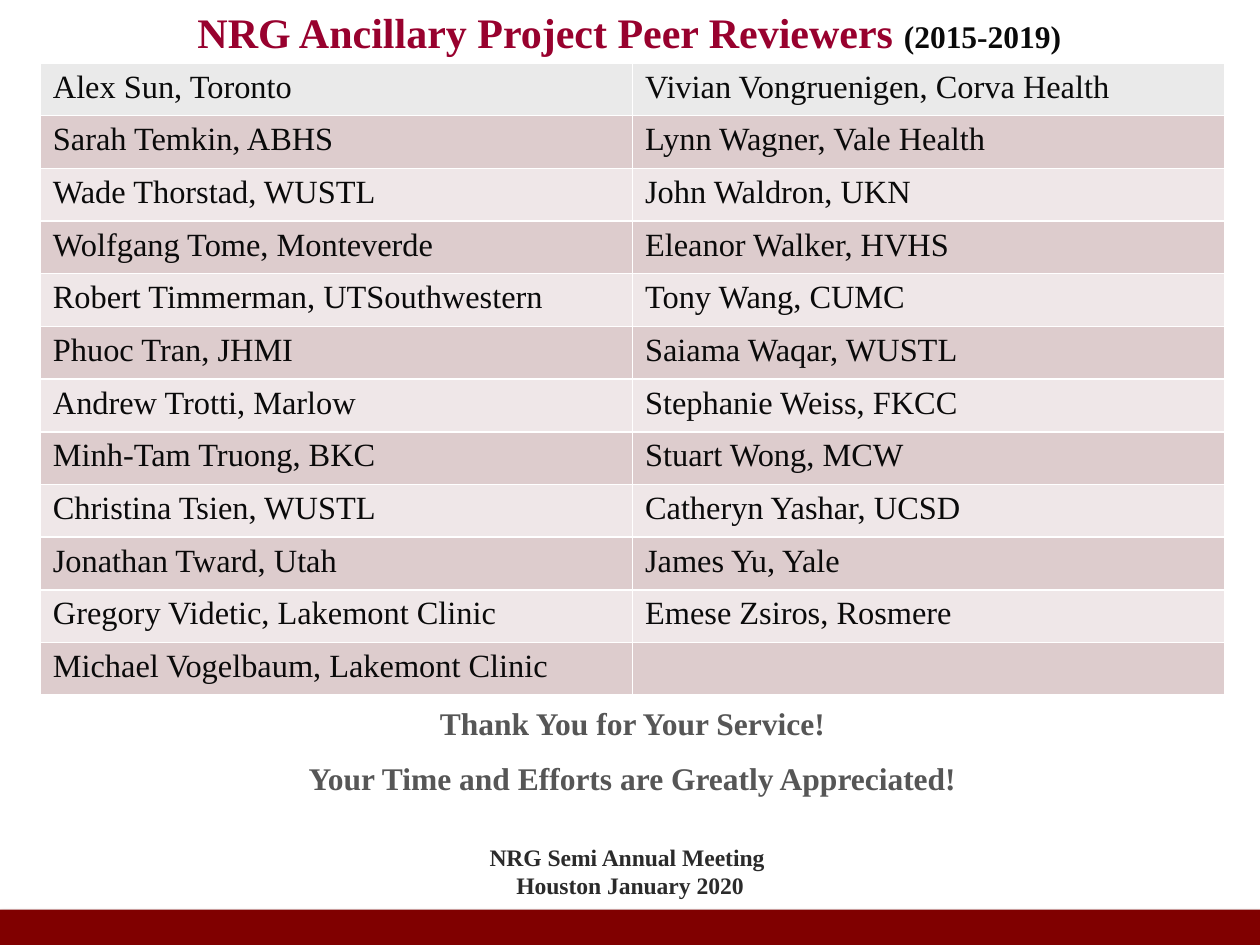
from lxml import etree
from pptx import Presentation
from pptx import util as u
from pptx.dml import color
from pptx.enum import shapes, text
from pptx.oxml import ns

FACE = "Times New Roman"
INK = "0A0A0A"
NAMES = [
    ("Alex Sun, Toronto", "Vivian Vongruenigen, Corva Health"),
    ("Sarah Temkin, ABHS", "Lynn Wagner, Vale Health"),
    ("Wade Thorstad, WUSTL", "John Waldron, UKN"),
    ("Wolfgang Tome, Monteverde", "Eleanor Walker, HVHS"),
    ("Robert Timmerman, UTSouthwestern", "Tony Wang, CUMC"),
    ("Phuoc Tran, JHMI", "Saiama Waqar, WUSTL"),
    ("Andrew Trotti, Marlow", "Stephanie Weiss, FKCC"),
    ("Minh-Tam Truong, BKC", "Stuart Wong, MCW"),
    ("Christina Tsien, WUSTL", "Catheryn Yashar, UCSD"),
    ("Jonathan Tward, Utah", "James Yu, Yale"),
    ("Gregory Videtic, Lakemont Clinic", "Emese Zsiros, Rosmere"),
    ("Michael Vogelbaum, Lakemont Clinic", ""),
]


def tint(value):
    return color.RGBColor.from_string(value)


def place(shape, box):
    shape.left, shape.top, shape.width, shape.height = map(u.Inches, box)


def add_run(para, words, size, shade, bold=True):
    run = para.add_run()
    run.text = words
    font = run.font
    font.name, font.size, font.bold = FACE, u.Pt(size), bold
    font.color.rgb = tint(shade)


def set_frame(frame):
    frame.word_wrap = True
    frame.auto_size = text.MSO_AUTO_SIZE.NONE
    frame.vertical_anchor = text.MSO_ANCHOR.TOP


def add_band(slide, box):
    band = slide.shapes.add_shape(shapes.MSO_SHAPE.RECTANGLE, *map(u.Inches, box))
    band.fill.solid()
    band.fill.fore_color.rgb = tint("800000")
    band.line.fill.background()
    band.shadow.inherit = False
    effects = band.element.spPr.find(ns.qn("a:effectLst"))
    shade = etree.SubElement(effects, ns.qn("a:outerShdw"), blurRad=str(u.Pt(3.1)),
                             dist=str(u.Pt(1.8)), dir="5400000", rotWithShape="0")
    black = etree.SubElement(shade, ns.qn("a:srgbClr"), val="000000")
    etree.SubElement(black, ns.qn("a:alpha"), val="35000")


def add_title(slide, box):
    title = slide.shapes.title
    place(title, box)
    set_frame(title.text_frame)
    para = title.text_frame.paragraphs[0]
    para.alignment = text.PP_ALIGN.CENTER
    add_run(para, "NRG Ancillary Project Peer Reviewers ", 24, "98012E")
    add_run(para, "(2015-2019)", 18, INK)


def add_names(slide, box):
    table = slide.shapes.add_table(len(NAMES), 2, *map(u.Inches, box)).table
    for i, pair in enumerate(NAMES):
        fill = "EAEAEA" if i == 0 else "DDCCCD" if i % 2 else "EFE7E8"
        for j, name in enumerate(pair):
            cell = table.cell(i, j)
            cell.fill.solid()
            cell.fill.fore_color.rgb = tint(fill)
            if name:
                add_run(cell.text_frame.paragraphs[0], name, 18.5, INK, False)


def add_lines(slide, box, lines, size, shade, space=None, after=0):
    frame = slide.shapes.add_textbox(*map(u.Inches, box)).text_frame
    set_frame(frame)
    for i, line in enumerate(lines):
        para = frame.add_paragraph() if i else frame.paragraphs[0]
        para.alignment = text.PP_ALIGN.CENTER
        para.line_spacing = space
        para.space_after = u.Pt(after)
        add_run(para, line, size, shade)


def main():
    deck = Presentation()
    deck.slide_width, deck.slide_height = u.Inches(10), u.Inches(7.5)
    slide = deck.slides.add_slide(deck.slide_layouts[5])
    add_band(slide, (0, 7.22, 10, 0.28))
    add_title(slide, (0.97, 0, 8.05, 0.5))
    add_lines(slide, (3.37, 6.64, 3.26, 0.56),
              ["NRG Semi Annual Meeting ", "Houston January 2020"], 13.5, "2B2B2B")
    add_names(slide, (0.32, 0.5, 9.4, 5.02))
    add_lines(slide, (0.32, 5.52, 9.4, 0.86),
              ["Thank You for Your Service!",
               "Your Time and Efforts are Greatly Appreciated!"],
              18, "565656", 1.07, 8)
    deck.save("out.pptx")


if __name__ == "__main__":
    main()
